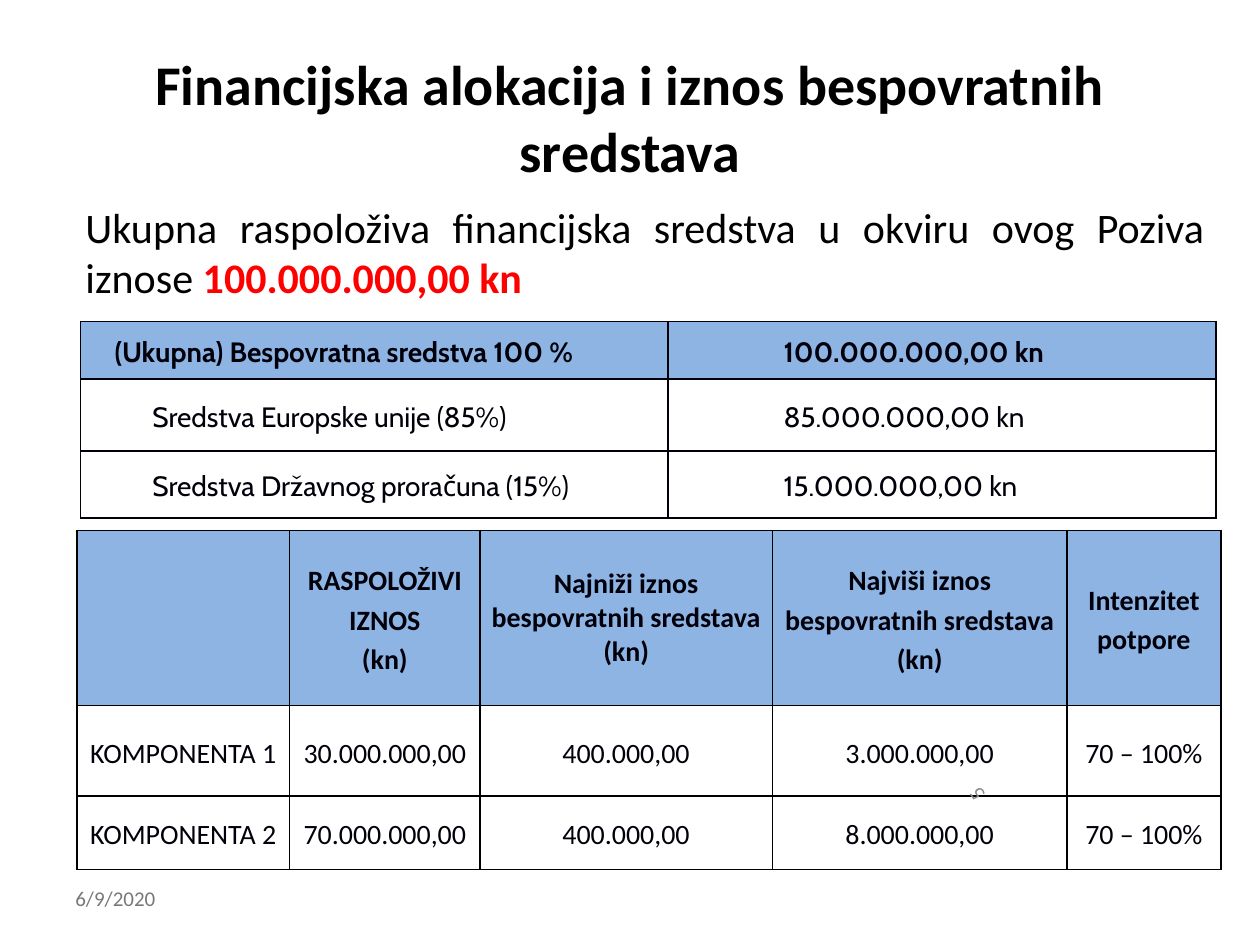
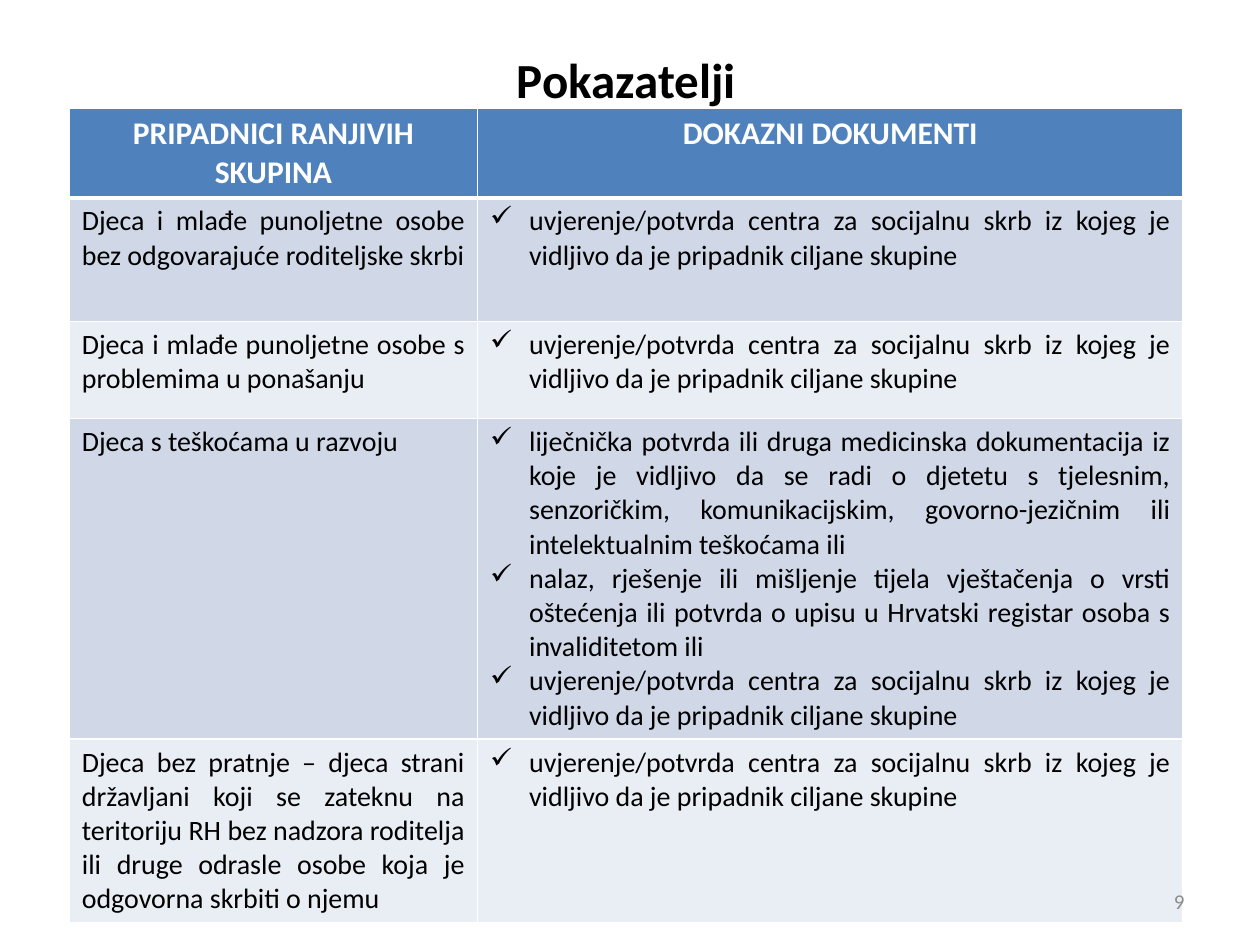
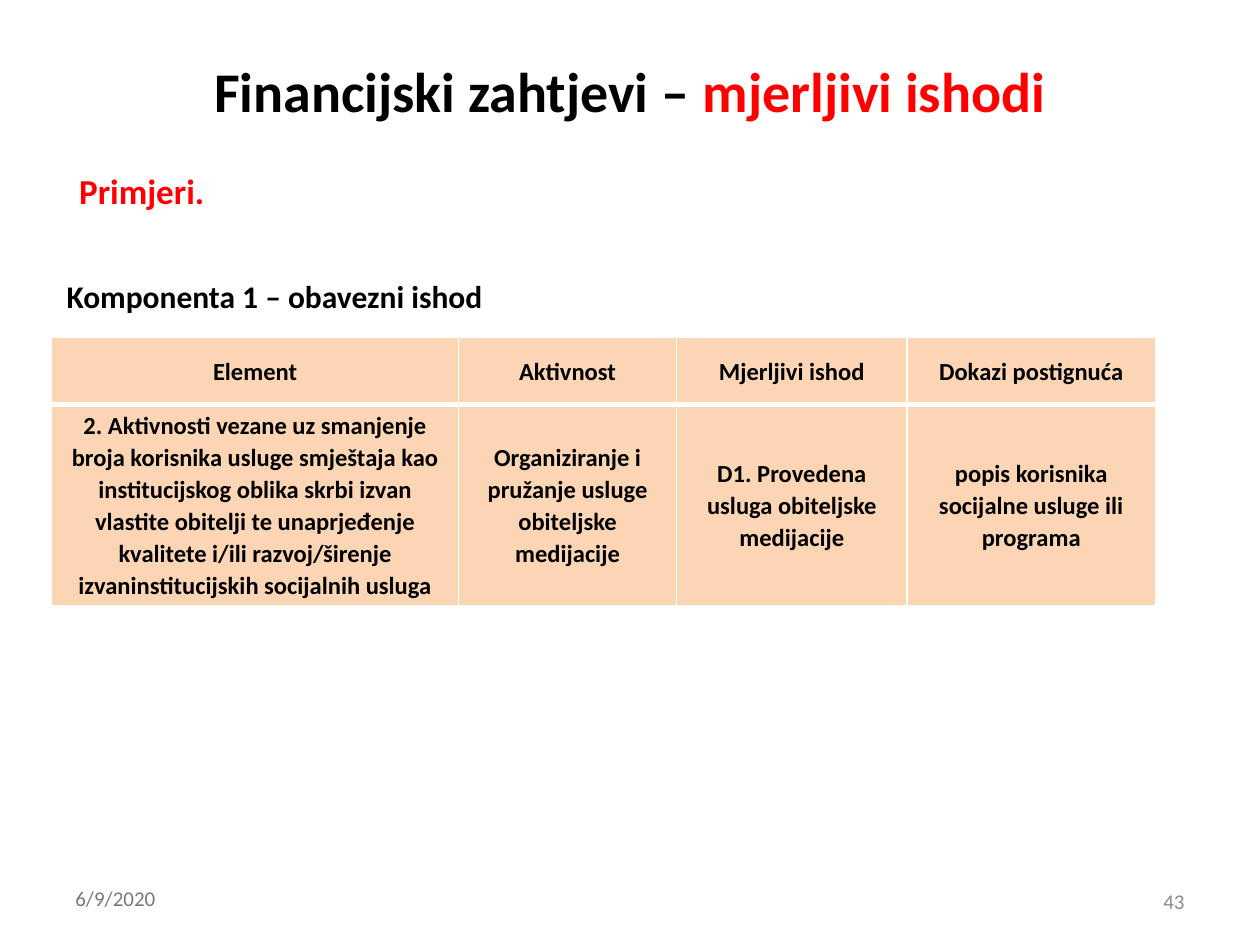
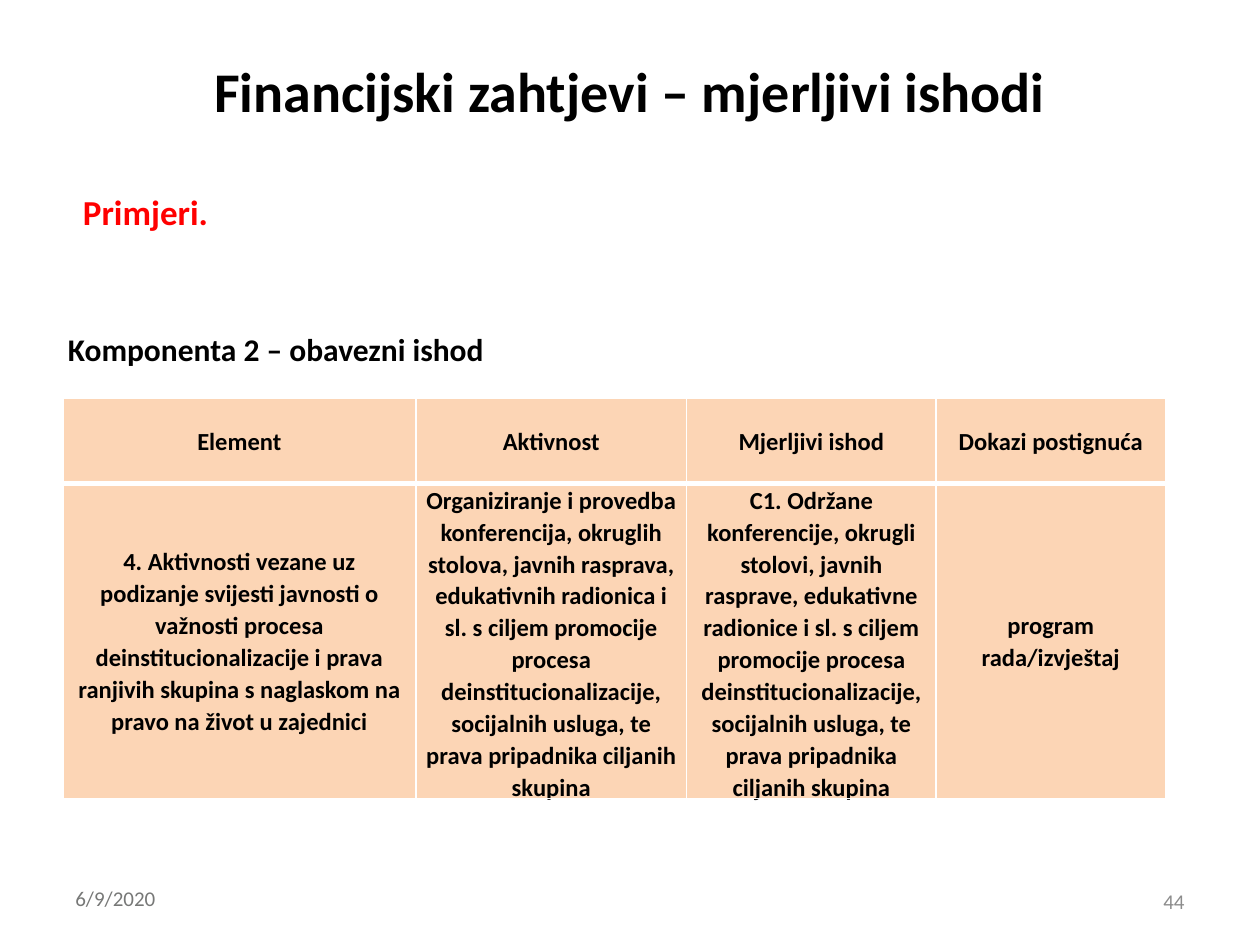
from lxml.etree import SubElement
from pptx import Presentation
from pptx.dml.color import RGBColor
from pptx.enum.text import MSO_ANCHOR as Anchor, MSO_AUTO_SIZE as AutoSize, PP_ALIGN as Align
from pptx.oxml.ns import qn
from pptx.util import Inches, Pt

COLORS = {
    "black": "000000", "ink": "00000A", "red": "FF0000", "white": "FFFFFF",
    "date": "777877", "number": "8C8C8C", "sky": "8EB4E3", "blue": "4F81BD",
    "band": "D0D8E8", "pale": "E9EDF4", "peach": "FCD5B5",
}
COLUMN = ROW = Inches(0.1)
TIGHT = (0.07, 0)
CENTRE_TIGHT = {"align": Align.CENTER, "anchor": Anchor.MIDDLE, "margins": TIGHT}
DATE = "6/9/2020"
DATE_BOX = (5, 69.8, 23.3, 4)
NUMBER_BOX = (71.7, 69.5, 23.3, 4)
CERTIFICATE = ("uvjerenje/potvrda centra za socijalnu skrb iz kojeg je vidljivo "
               "da je pripadnik ciljane skupine")


def place(box):
    """Turn a box in grid columns and rows into slide lengths."""
    x, y, width, height = box
    return [int(x * COLUMN), int(y * ROW), int(width * COLUMN), int(height * ROW)]


def color(name):
    """Look up a named colour."""
    return RGBColor.from_string(COLORS[name])


def write(frame, paras, size=16, ink="black", bold=False, font="Calibri", align=Align.LEFT,
          line=None, after=None, indent=0, hanging=0, bullet=None):
    """Fill a text frame with paragraphs of strings or (text, format) spans."""
    for index, content in enumerate(paras):
        para = frame.add_paragraph() if index else frame.paragraphs[0]
        properties = para._p.get_or_add_pPr()
        if indent:
            properties.set("marL", str(Inches(indent)))
            properties.set("indent", str(Inches(-hanging)))
        if bullet:
            SubElement(properties, qn("a:buChar"), char=bullet)
        para.alignment = align
        if line:
            para.line_spacing = line
        if after:
            para.space_after = Pt(after)
        spans = [(content, {})] if isinstance(content, str) else content
        for text, changes in spans:
            span = para.add_run()
            span.text = text
            span.font.name = font
            span.font.size = Pt(size)
            span.font.bold = changes.get("bold", bold)
            span.font.color.rgb = color(changes.get("ink", ink))


def add_text(page, box, paras, anchor=Anchor.TOP, rotation=0, grow=False, **style):
    """Add a wrapped text box."""
    shape = page.shapes.add_textbox(*place(box))
    shape.rotation = rotation
    frame = shape.text_frame
    frame.word_wrap = True
    frame.vertical_anchor = anchor
    if grow:
        frame.auto_size = AutoSize.SHAPE_TO_FIT_TEXT
    write(frame, paras, **style)


def add_page(deck, box, title, size=32):
    """Add a title-only slide with its heading placed and formatted."""
    page = deck.slides.add_slide(deck.slide_layouts[5])
    heading = page.shapes.title
    heading.left, heading.top, heading.width, heading.height = place(box)
    frame = heading.text_frame
    frame.auto_size = AutoSize.NONE
    frame.vertical_anchor = Anchor.MIDDLE
    write(frame, [title], size=size, bold=True, align=Align.CENTER)
    return page


def add_footer(page, number, date=True, rotation=0):
    """Add the date and the slide number."""
    if date:
        add_text(page, DATE_BOX, [DATE], size=12, ink="date")
    add_text(page, NUMBER_BOX, [number], size=12, ink="number", align=Align.RIGHT,
             anchor=Anchor.MIDDLE, rotation=rotation)


def set_borders(cell, ink, bottom):
    """Draw the four edges of a cell."""
    properties = cell._tc.get_or_add_tcPr()
    for side, weight in (("L", 1), ("R", 1), ("T", 1), ("B", bottom)):
        edge = SubElement(properties, qn(f"a:ln{side}"), w=str(Pt(weight)))
        SubElement(SubElement(edge, qn("a:solidFill")), qn("a:srgbClr"), val=COLORS[ink])


def format_cell(cell, content, fill=None, border="black", bottom=1, anchor=Anchor.TOP,
                margins=(0.1, 0.05), **style):
    """Border, fill and write one table cell."""
    set_borders(cell, border, bottom)
    if fill:
        cell.fill.solid()
        cell.fill.fore_color.rgb = color(fill)
    else:
        cell.fill.background()
    cell.vertical_anchor = anchor
    cell.margin_left = cell.margin_right = Inches(margins[0])
    cell.margin_top = cell.margin_bottom = Inches(margins[1])
    if content:
        write(cell.text_frame, [content] if isinstance(content, str) else content, **style)


def add_grid(page, box, columns, rows, cells, style_at):
    """Add a table whose cell formats come from style_at(row, column)."""
    holder = page.shapes.add_table(len(rows), len(columns), *place(box))
    table = holder.table
    table.first_row = table.horz_banding = False
    for column, width in zip(table.columns, columns):
        column.width = int(width * COLUMN)
    for row, height in zip(table.rows, rows):
        row.height = int(height * ROW)
    holder.height = place(box)[3]
    for r, line in enumerate(cells):
        for c, content in enumerate(line):
            format_cell(table.cell(r, c), content, **style_at(r, c))


def funding_style(row, column):
    """Format the cells of the funding sources table."""
    indent = 0.85 if column else 0.5 if row else 0.2
    return {"fill": "white" if row else "sky", "border": "ink", "ink": "ink", "font": "Cabin",
            "bold": row == 0, "align": Align.JUSTIFY, "line": 1.15, "indent": indent,
            "anchor": Anchor.MIDDLE, "margins": TIGHT}


def component_style(row, column):
    """Format the cells of the components table."""
    return {**CENTRE_TIGHT, "fill": None if row else "sky", "bold": row == 0, "ink": "ink",
            "line": 1 if (row, column) == (0, 2) else 1.15}


def indicator_style(row, column):
    """Format the cells of the indicators table."""
    if row == 0:
        return {"fill": "blue", "border": "white", "bottom": 3, "size": 18, "ink": "white",
                "bold": True, "align": Align.CENTER}
    check = {"indent": 0.31, "hanging": 0.31, "bullet": "✓"} if column else {}
    return {"fill": "band" if row % 2 else "pale", "border": "white",
            "align": Align.JUSTIFY, **check}


def outcome_style(row, column):
    """Format the cells of the outcome tables."""
    return {**CENTRE_TIGHT, "fill": "peach", "border": "white", "bottom": 1 if row else 3,
            "size": 14, "bold": True, "line": 1.07}


def build_allocation(deck):
    """Build the slide on the financial allocation."""
    page = add_page(deck, (5, 3, 90, 12.5), "Financijska alokacija i iznos bespovratnih sredstava")
    add_text(page, (5.8, 15.5, 90.8, 49.5), [[
        ("Ukupna raspoloživa financijska sredstva u okviru ovog Poziva iznose ", {}),
        ("100.000.000,00 kn", {"ink": "red", "bold": True}),
    ]], size=24, align=Align.JUSTIFY)
    add_grid(page, (6.4, 25.5, 90.1, 15.6), (46.6, 43.5), (4.6, 5.7, 5.3), [
        ("(Ukupna) Bespovratna sredstva 100 %", "100.000.000,00 kn"),
        ("Sredstva Europske unije (85%)", "85.000.000,00 kn"),
        ("Sredstva Državnog proračuna (15%)", "15.000.000,00 kn"),
    ], funding_style)
    add_grid(page, (6.1, 42.1, 90.8, 26.7), (16.9, 15.1, 23.2, 23.4, 12.2), (13.9, 7.2, 5.8), [
        ("", ("RASPOLOŽIVI IZNOS", "(kn)"),
         ("Najniži iznos", "bespovratnih sredstava (kn)"),
         ("Najviši iznos", "bespovratnih sredstava", "(kn)"), "Intenzitet potpore"),
        ("KOMPONENTA 1", "30.000.000,00", "400.000,00", "3.000.000,00", "70 – 100%"),
        ("KOMPONENTA 2", "70.000.000,00", "400.000,00", "8.000.000,00", "70 – 100%"),
    ], component_style)
    add_footer(page, "5", rotation=235)


def build_indicators(deck):
    """Build the slide on vulnerable groups and their documents."""
    page = add_page(deck, (5.5, 0, 88.4, 12.5), "Pokazatelji", size=28)
    add_grid(page, (5.5, 8.6, 88.4, 63.7), (32.4, 56), (6, 9.8, 7.7, 9.3, 9.3), [
        ("PRIPADNICI RANJIVIH SKUPINA", "DOKAZNI DOKUMENTI"),
        ("Djeca i mlađe punoljetne osobe bez odgovarajuće roditeljske skrbi", CERTIFICATE),
        ("Djeca i mlađe punoljetne osobe s problemima u ponašanju", CERTIFICATE),
        ("Djeca s teškoćama u razvoju", (
            "liječnička potvrda ili druga medicinska dokumentacija iz koje je vidljivo da se "
            "radi o djetetu s tjelesnim, senzoričkim, komunikacijskim, govorno-jezičnim ili "
            "intelektualnim teškoćama ili",
            "nalaz, rješenje ili mišljenje tijela vještačenja o vrsti oštećenja ili potvrda o "
            "upisu u Hrvatski registar osoba s invaliditetom ili",
            CERTIFICATE)),
        ("Djeca bez pratnje – djeca strani državljani koji se zateknu na teritoriju RH bez "
         "nadzora roditelja ili druge odrasle osobe koja je odgovorna skrbiti o njemu",
         CERTIFICATE),
    ], indicator_style)
    add_footer(page, "9", date=False)


def build_outcome(deck, number, ending, example, label, box, columns, header, outcome):
    """Build a slide with one example of a measurable outcome."""
    page = add_page(deck, (5, 0.9, 90, 12.5), [("Financijski zahtjevi – ", {}),
                                               ("mjerljivi ishodi", {"ink": ending})])
    example_box, indent = example
    label_box, component = label
    shared = {"bold": True, "align": Align.JUSTIFY, "line": 1.07, "after": 8}
    add_text(page, example_box, ["Primjeri."], size=20, ink="red", indent=indent, **shared)
    add_grid(page, box, columns, (header, 16), [
        ("Element", "Aktivnost", "Mjerljivi ishod", "Dokazi postignuća"), outcome,
    ], outcome_style)
    add_text(page, label_box, [f"{component} – obavezni ishod"], size=18, grow=True, **shared)
    add_footer(page, number)


def main():
    """Build and save the deck."""
    deck = Presentation()
    deck.slide_width, deck.slide_height = 100 * COLUMN, 75 * ROW
    build_allocation(deck)
    build_indicators(deck)
    build_outcome(
        deck, "43", "red", ((5.3, 12.7, 87.6, 55.1), 0),
        ((4.3, 21.3, 35.5, 4.1), "Komponenta 1"),
        (4.1, 26.8, 87.6, 21.3), (32.3, 17.3, 18.3, 19.7), 5.3, (
            "2. Aktivnosti vezane uz smanjenje broja korisnika usluge smještaja kao "
            "institucijskog oblika skrbi izvan vlastite obitelji te unaprjeđenje kvalitete "
            "i/ili razvoj/širenje izvaninstitucijskih socijalnih usluga",
            "Organiziranje i pružanje usluge obiteljske medijacije",
            "D1. Provedena usluga obiteljske medijacije",
            "popis korisnika socijalne usluge ili programa"))
    build_outcome(
        deck, "44", "black", ((5, 14.4, 87.6, 55.1), 0.06),
        ((4.4, 25.5, 35.5, 4.1), "Komponenta 2"),
        (5, 31.6, 87.6, 31.7), (28, 21.5, 19.8, 18.2), 6.8, (
            "4. Aktivnosti vezane uz podizanje svijesti javnosti o važnosti procesa "
            "deinstitucionalizacije i prava ranjivih skupina s naglaskom na pravo na život "
            "u zajednici",
            "Organiziranje i provedba konferencija, okruglih stolova, javnih rasprava, "
            "edukativnih radionica i sl. s ciljem promocije procesa deinstitucionalizacije, "
            "socijalnih usluga, te prava pripadnika ciljanih skupina",
            "C1. Održane konferencije, okrugli stolovi, javnih rasprave, edukativne radionice "
            "i sl. s ciljem promocije procesa deinstitucionalizacije, socijalnih usluga, te "
            "prava pripadnika ciljanih skupina",
            "program rada/izvještaj"))
    deck.save("out.pptx")


if __name__ == "__main__":
    main()
